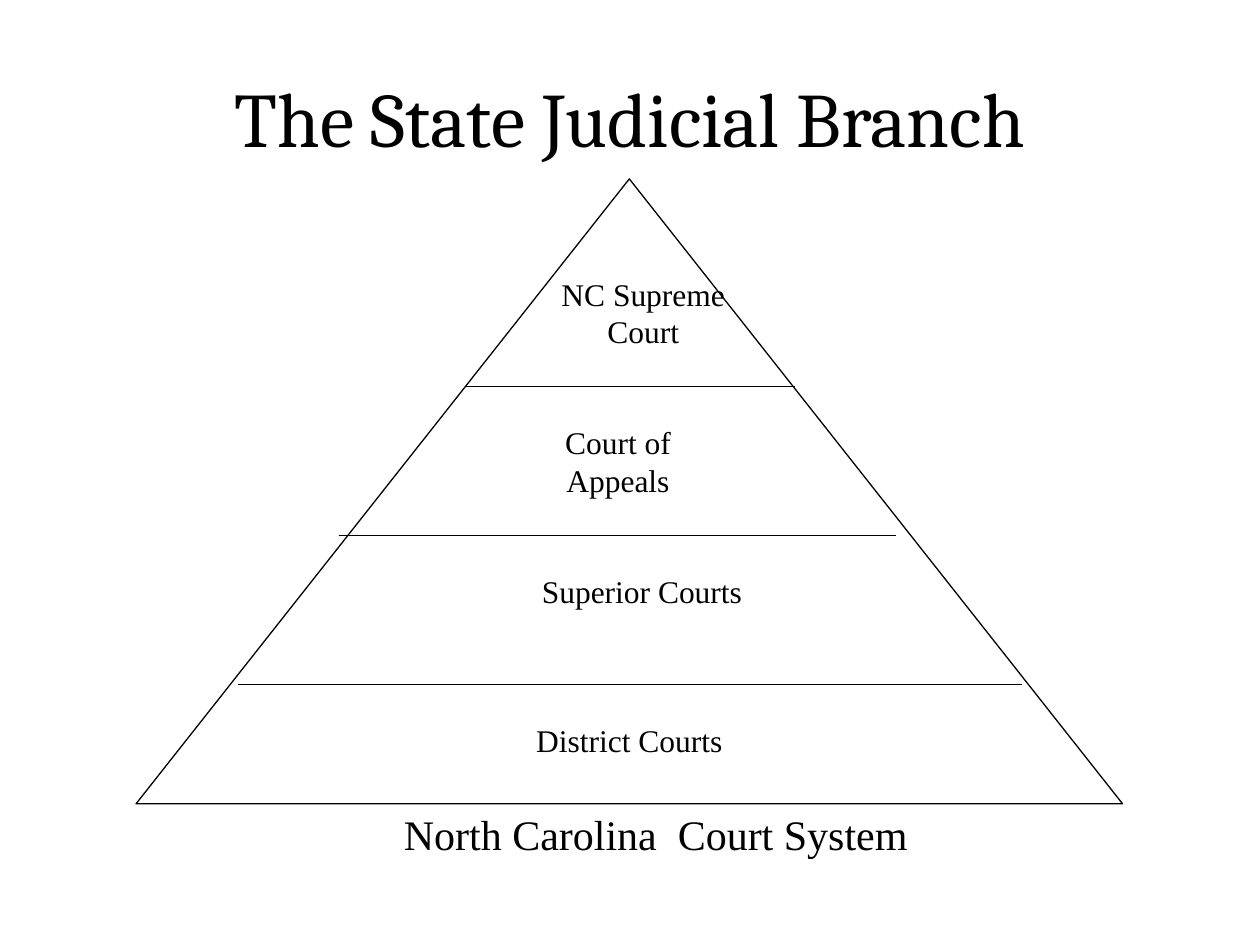
from dataclasses import dataclass

from lxml.etree import SubElement
from pptx import Presentation
from pptx.dml.color import RGBColor
from pptx.enum.shapes import MSO_CONNECTOR, MSO_SHAPE
from pptx.enum.text import MSO_ANCHOR, PP_ALIGN
from pptx.oxml.ns import qn
from pptx.slide import Slide
from pptx.text.text import TextFrame
from pptx.util import Inches, Pt

COLORS = {"ink": "000000", "paper": "FFFFFF"}
LINE_WIDTH = Pt(0.75)
TIER_PITCH = 1.18
FIRST_LABEL_TOP = 2.13
FIRST_DIVIDER_TOP = 3.07


@dataclass
class Label:
    text: str
    left: float
    width: float
    height: float
    size: int = 18


@dataclass
class Divider:
    left: float
    right: float


COURTS = [
    Label("NC Supreme Court", 4.3, 1.61, 0.94),
    Label("Court of Appeals", 4.1, 1.61, 0.94),
    Label("Superior Courts", 3.69, 2.81, 0.94),
    Label("District Courts", 3.29, 3.41, 1.09),
]
DIVIDERS = [Divider(3.69, 6.31), Divider(2.69, 7.11), Divider(1.89, 8.11)]
CAPTION = Label("North Carolina  Court System", 2.09, 6.23, 0.71, 24)


def color(name: str) -> RGBColor:
    return RGBColor.from_string(COLORS[name])


def write(frame: TextFrame, text: str, size: int, font_name: str) -> None:
    frame.word_wrap = True
    frame.text = text
    paragraph = frame.paragraphs[0]
    paragraph.alignment = PP_ALIGN.CENTER
    paragraph.font.size = Pt(size)
    paragraph.font.name = font_name
    paragraph.font.color.rgb = color("ink")


def draw_title(slide: Slide, text: str) -> None:
    title = slide.shapes.title
    title.left, title.top = Inches(0.5), Inches(0.3)
    title.width, title.height = Inches(9), Inches(1.25)
    title.text_frame.vertical_anchor = MSO_ANCHOR.MIDDLE
    write(title.text_frame, text, 44, "Cambria")


def draw_pyramid(slide: Slide) -> None:
    pyramid = slide.shapes.add_shape(
        MSO_SHAPE.ISOSCELES_TRIANGLE,
        Inches(1.08), Inches(1.42), Inches(7.83), Inches(4.96),
    )
    pyramid.shadow.inherit = False
    pyramid.fill.solid()
    pyramid.fill.fore_color.rgb = color("paper")
    pyramid.line.color.rgb = color("ink")
    pyramid.line.width = LINE_WIDTH


def draw_divider(slide: Slide, divider: Divider, top: float) -> None:
    line = slide.shapes.add_connector(
        MSO_CONNECTOR.STRAIGHT,
        Inches(divider.left), Inches(top), Inches(divider.right), Inches(top),
    )
    line.line.color.rgb = color("ink")
    line.line.width = LINE_WIDTH
    SubElement(line._element.spPr, qn("a:effectLst"))


def draw_label(slide: Slide, label: Label, top: float) -> None:
    box = slide.shapes.add_textbox(
        Inches(label.left), Inches(top), Inches(label.width), Inches(label.height)
    )
    write(box.text_frame, label.text, label.size, "Times New Roman")


def main() -> None:
    presentation = Presentation()
    presentation.slide_width = Inches(10)
    presentation.slide_height = Inches(7.5)
    slide = presentation.slides.add_slide(presentation.slide_layouts[5])

    draw_title(slide, "The State Judicial Branch")
    draw_pyramid(slide)
    for tier, divider in enumerate(DIVIDERS):
        draw_divider(slide, divider, FIRST_DIVIDER_TOP + tier * TIER_PITCH)
    for tier, court in enumerate(COURTS):
        draw_label(slide, court, FIRST_LABEL_TOP + tier * TIER_PITCH)
    draw_label(slide, CAPTION, 6.37)

    presentation.save("out.pptx")


if __name__ == "__main__":
    main()
